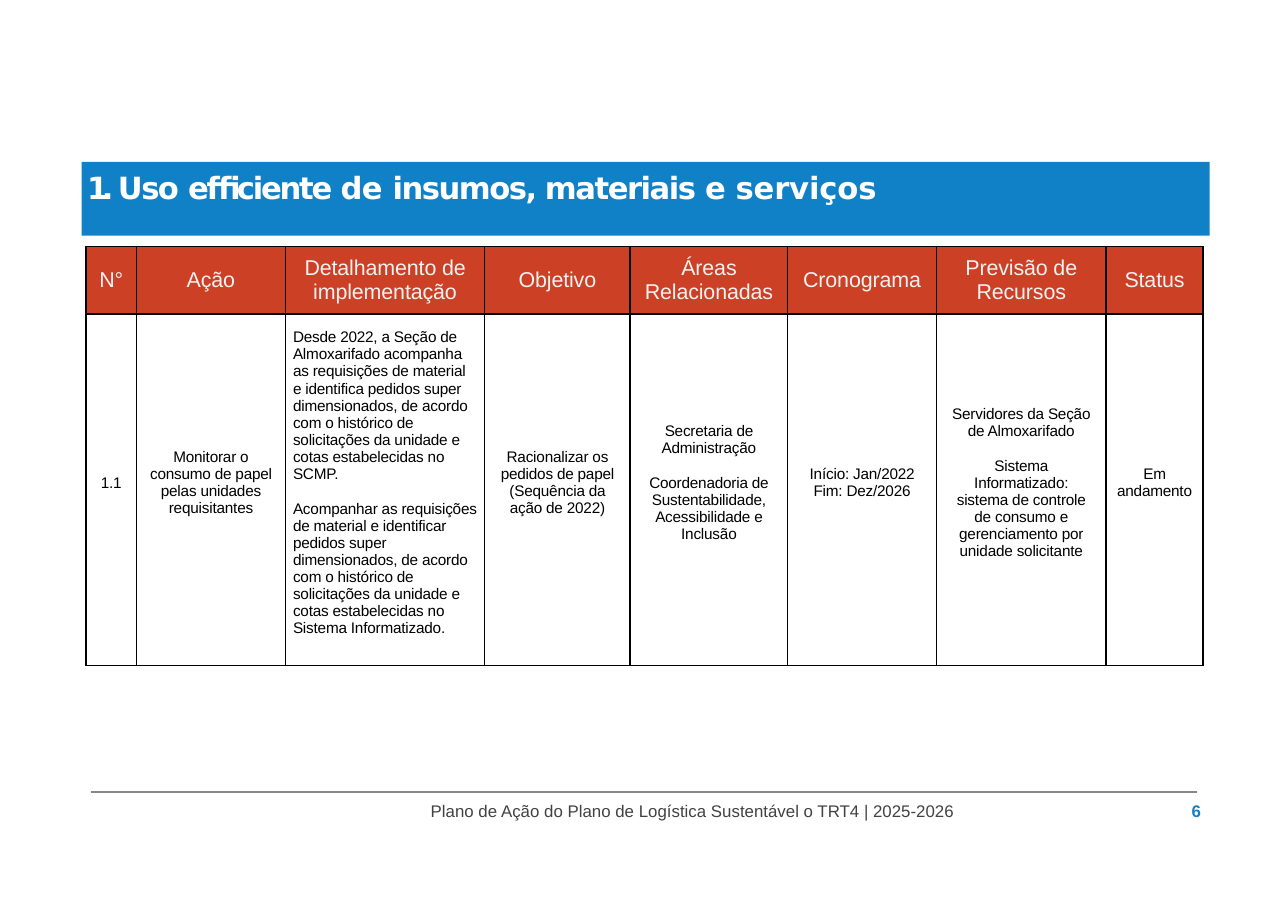
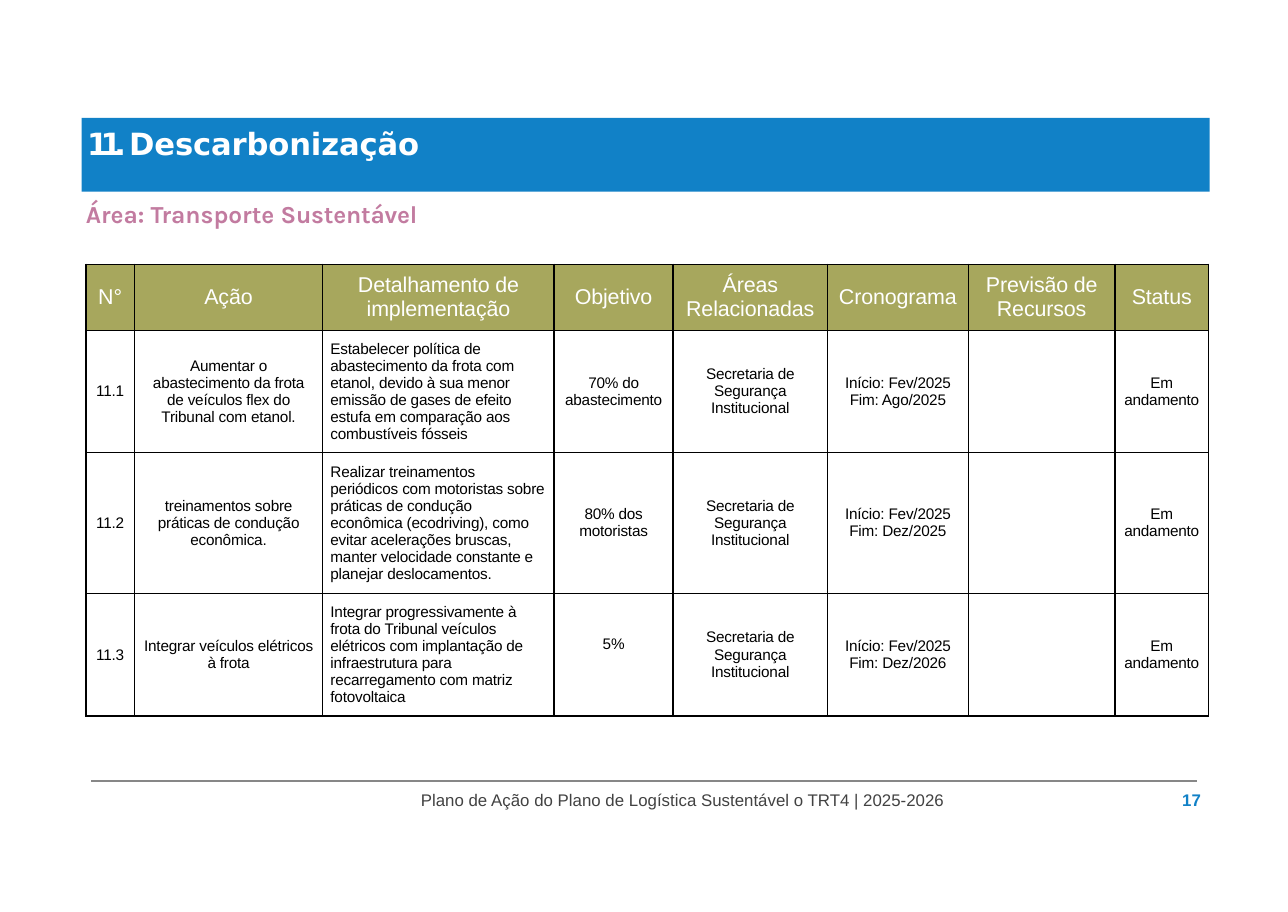
from dataclasses import dataclass

from lxml.etree import SubElement
from pptx import Presentation
from pptx.dml.color import RGBColor
from pptx.enum.shapes import MSO_CONNECTOR, MSO_SHAPE
from pptx.enum.text import MSO_ANCHOR as Anchor, PP_ALIGN as Align
from pptx.oxml.ns import qn
from pptx.util import Inches, Pt

BLUE = RGBColor(0x11, 0x81, 0xC7)
RED = RGBColor(0xCC, 0x40, 0x25)
OLIVE = RGBColor(0xA7, 0xA7, 0x5D)
PINK = RGBColor(0xC2, 0x7B, 0xA0)
WHITE = RGBColor(0xFF, 0xFF, 0xFF)
PALE = RGBColor(0xF2, 0xF2, 0xF2)
BLACK = RGBColor(0x00, 0x00, 0x00)
DARK_GREY = RGBColor(0x42, 0x42, 0x42)
RULE_GREY = RGBColor(0x87, 0x87, 0x87)


@dataclass
class TextStyle:
    font: str
    size: float
    color: RGBColor
    bold: bool = False
    align: Align = Align.LEFT
    gap: float = 0


TITLE = TextStyle("DejaVu Sans", 20, WHITE, bold=True)
SUBTITLE = TextStyle("Karla", 16, PINK, bold=True)
FOOTER = TextStyle("Arial", 11, DARK_GREY)
PAGE_NUMBER = TextStyle("Arial", 11, BLUE, bold=True, align=Align.RIGHT)
CENTRED = TextStyle("Arial", 10, BLACK, align=Align.CENTER, gap=11.5)
DETAIL = TextStyle("Arial", 10, BLACK, gap=11.5)

FOOTER_TEXT = "Plano de Ação do Plano de Logística Sustentável o TRT4 | 2025-2026"
HEADINGS = ["N°", "Ação", "Detalhamento de implementação", "Objetivo",
            "Áreas Relacionadas", "Cronograma", "Previsão de Recursos", "Status"]
DETAIL_COLUMN = HEADINGS.index("Detalhamento de implementação")
HEADING_MARGIN = 0.04
BODY_MARGINS = [0.04, 0.08, 0.07, 0.08, 0.08, 0.08, 0.1, 0.04]
BODY_TRACKING = -0.1
SECURITY = "Secretaria de Segurança Institucional"
ONGOING = "Em andamento"

PAPER_ROWS = [[
    "1.1",
    "Monitorar o consumo de papel pelas unidades requisitantes",
    "Desde 2022, a Seção de Almoxarifado acompanha as requisições de material "
    "e identifica pedidos super dimensionados, de acordo com o histórico de "
    "solicitações da unidade e cotas estabelecidas no SCMP.\n"
    "Acompanhar as requisições de material e identificar pedidos super "
    "dimensionados, de acordo com o histórico de solicitações da unidade e "
    "cotas estabelecidas no Sistema Informatizado.",
    "Racionalizar os pedidos de papel (Sequência da ação de 2022)",
    "Secretaria de Administração\n"
    "Coordenadoria de Sustentabilidade, Acessibilidade e Inclusão",
    "Início: Jan/2022 Fim: Dez/2026",
    "Servidores da Seção de Almoxarifado\n"
    "Sistema Informatizado: sistema de controle de consumo e gerenciamento "
    "por unidade solicitante",
    ONGOING,
]]
CARBON_ROWS = [
    ["11.1",
     "Aumentar o abastecimento da frota de veículos flex do Tribunal com etanol.",
     "Estabelecer política de abastecimento da frota com etanol, devido à sua "
     "menor emissão de gases de efeito estufa em comparação aos combustíveis fósseis",
     "70% do abastecimento", SECURITY, "Início: Fev/2025 Fim: Ago/2025", "", ONGOING],
    ["11.2",
     "treinamentos sobre práticas de condução econômica.",
     "Realizar treinamentos periódicos com motoristas sobre práticas de condução "
     "econômica (ecodriving), como evitar acelerações bruscas, manter velocidade "
     "constante e planejar deslocamentos.",
     "80% dos motoristas", SECURITY, "Início: Fev/2025 Fim: Dez/2025", "", ONGOING],
    ["11.3",
     "Integrar veículos elétricos à frota",
     "Integrar progressivamente à frota do Tribunal veículos elétricos com "
     "implantação de infraestrutura para recarregamento com matriz fotovoltaica",
     "5%", SECURITY, "Início: Fev/2025 Fim: Dez/2026", "", ONGOING],
]


def set_all(target, values):
    for name, value in values.items():
        setattr(target, name, value)


def write(frame, paragraphs, style):
    """Fill a frame; each paragraph is a list of (text, tracking in points)."""
    for index, spans in enumerate(paragraphs):
        para = frame.add_paragraph() if index else frame.paragraphs[0]
        para.alignment = style.align
        if index:
            para.space_before = Pt(style.gap)
        for text, tracking in spans:
            span = para.add_run()
            span.text = text
            set_all(span.font, {"name": style.font, "size": Pt(style.size),
                                "bold": style.bold})
            span.font.color.rgb = style.color
            span._r.get_or_add_rPr().set("spc", str(round(tracking * 100)))


def set_frame(frame, left=0, top=0):
    set_all(frame, {"word_wrap": True, "vertical_anchor": Anchor.TOP,
                    "margin_left": Inches(left), "margin_top": Inches(top),
                    "margin_right": 0, "margin_bottom": 0})


def add_text(page, box, spans, style):
    frame = page.shapes.add_textbox(*map(Inches, box)).text_frame
    set_frame(frame)
    write(frame, [spans], style)


def add_title_band(page, top, spans):
    band = page.shapes.add_shape(MSO_SHAPE.RECTANGLE, Inches(0.74), Inches(top),
                                 Inches(10.24), Inches(0.67))
    band.shadow.inherit = False
    band.fill.solid()
    band.fill.fore_color.rgb = BLUE
    band.line.fill.background()
    set_frame(band.text_frame, left=0.05, top=0.06)
    write(band.text_frame, [spans], TITLE)


def add_footer(page, top, text_left, number):
    """Draw the rule at top, with the text and the page number below it."""
    rule = page.shapes.add_connector(MSO_CONNECTOR.STRAIGHT, Inches(0.83), Inches(top),
                                     Inches(10.86), Inches(top))
    rule.line.color.rgb = RULE_GREY
    rule.line.width = Pt(1)
    SubElement(rule._element.spPr, qn("a:effectLst"))
    text_top = top + 0.08
    add_text(page, (text_left, text_top, 4.86, 0.2), [(FOOTER_TEXT, 0)], FOOTER)
    add_text(page, (10.5, text_top, 0.4, 0.2), [(str(number), 0)], PAGE_NUMBER)


def add_borders(cell):
    properties = cell._tc.get_or_add_tcPr()
    for side in ("lnL", "lnR", "lnT", "lnB"):
        line = SubElement(properties, qn(f"a:{side}"), w=str(Pt(1)))
        fill = SubElement(line, qn("a:solidFill"))
        SubElement(fill, qn("a:srgbClr"), val=str(BLACK))


def fill_cell(cell, text, style, margin, lift=0, fill=None):
    """Write a cell centred in height; lift is the space kept below its text."""
    set_all(cell, {"margin_left": Inches(margin), "margin_right": Inches(margin),
                   "margin_top": 0, "margin_bottom": Inches(lift),
                   "vertical_anchor": Anchor.MIDDLE})
    add_borders(cell)
    if fill is None:
        cell.fill.background()
    else:
        cell.fill.solid()
        cell.fill.fore_color.rgb = fill
    if text:
        paragraphs = [[(part, BODY_TRACKING)] for part in text.split("\n")]
        write(cell.text_frame, paragraphs, style)


def add_action_table(page, top, widths, heights, rows, fill, heading_color, lifts):
    """Draw the plan table; lifts maps (row, column) to the space below a text."""
    frame = page.shapes.add_table(len(heights), len(widths), Inches(0.78), Inches(top),
                                  Inches(sum(widths)), Inches(sum(heights)))
    table = frame.table
    set_all(table, {"first_row": False, "horz_banding": False})
    for column, width in zip(table.columns, widths):
        column.width = Inches(width)
    for row, height in zip(table.rows, heights):
        row.height = Inches(height)
    heading = TextStyle("Arial", 14, heading_color, align=Align.CENTER)
    for column, text in enumerate(HEADINGS):
        fill_cell(table.cell(0, column), text, heading, HEADING_MARGIN, fill=fill)
    for row, texts in enumerate(rows, start=1):
        for column, text in enumerate(texts):
            style = DETAIL if column == DETAIL_COLUMN else CENTRED
            fill_cell(table.cell(row, column), text, style, BODY_MARGINS[column],
                      lift=lifts.get((row, column), 0))


def add_page(deck):
    return deck.slides.add_slide(deck.slide_layouts[6])


def build_supplies(deck):
    page = add_page(deck)
    add_title_band(page, 1.47, [
        ("1. ", -4.2), ("Uso ", -1), ("efficiente ", -1.5), ("de ", -0.5),
        ("insumos, materiais ", -1), ("e ", -0.7), ("serviços", -0.1)])
    add_action_table(page, 2.24, [0.46, 1.35, 1.81, 1.32, 1.43, 1.35, 1.54, 0.88],
                     [0.61, 3.19], PAPER_ROWS, RED, PALE,
                     {(1, column): 0.12 for column in range(len(HEADINGS))})
    add_footer(page, 7.19, 3.91, 6)


def build_decarbonisation(deck):
    page = add_page(deck)
    add_title_band(page, 1.07, [("11. ", -5), ("Descarbonização", -0.1)])
    add_text(page, (0.78, 1.81, 3.44, 0.27),
             [("Área: Transporte ", 0), ("Sustentável", -0.1)], SUBTITLE)
    add_action_table(page, 2.4, [0.44, 1.71, 2.1, 1.08, 1.4, 1.28, 1.33, 0.85],
                     [0.6, 1.11, 1.28, 1.11], CARBON_ROWS, OLIVE, WHITE, {(3, 3): 0.2})
    add_footer(page, 7.09, 3.82, 17)


def main():
    deck = Presentation()
    set_all(deck, {"slide_width": Inches(11.69), "slide_height": Inches(8.28)})
    build_supplies(deck)
    build_decarbonisation(deck)
    deck.save("out.pptx")


if __name__ == "__main__":
    main()
